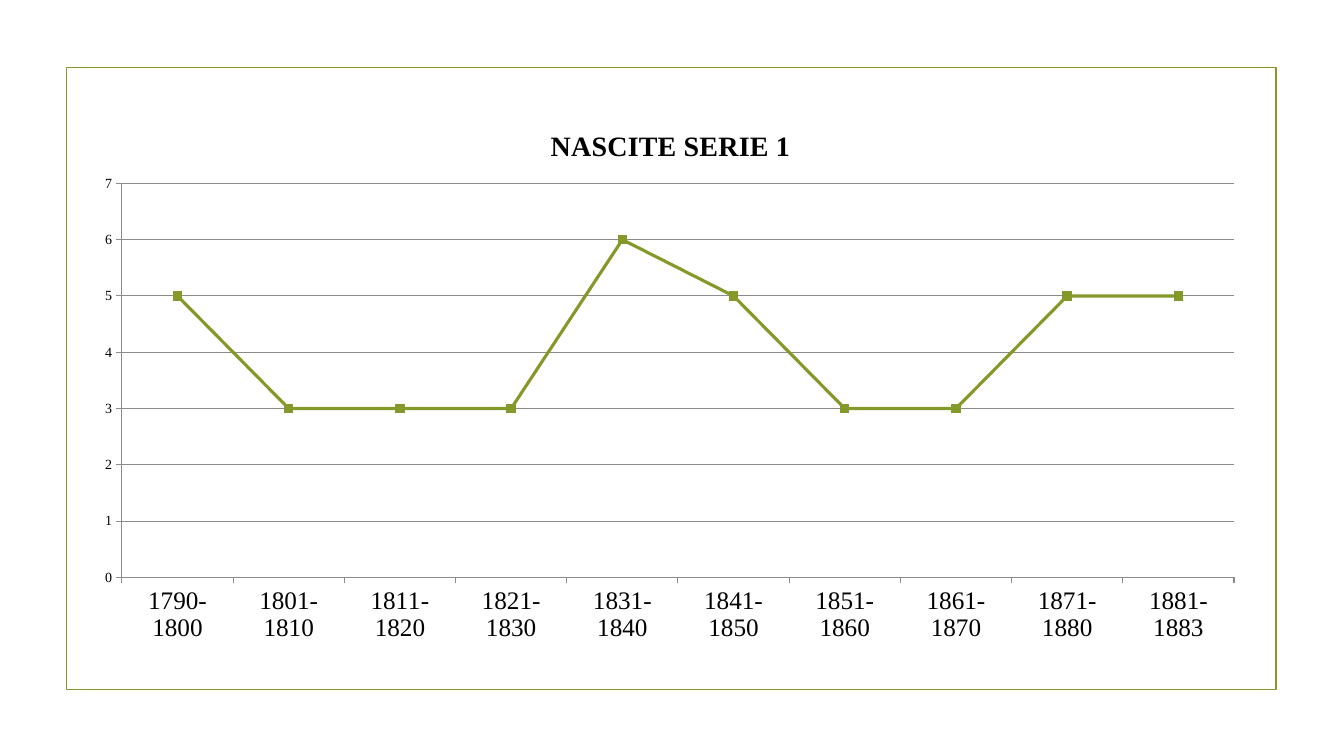
from dataclasses import dataclass

from pptx import Presentation
from pptx.chart.axis import CategoryAxis, ValueAxis
from pptx.chart.chart import Chart
from pptx.chart.data import CategoryChartData
from pptx.dml.color import RGBColor
from pptx.enum.chart import XL_CHART_TYPE, XL_MARKER_STYLE, XL_TICK_MARK
from pptx.enum.shapes import MSO_SHAPE
from pptx.oxml import parse_xml
from pptx.oxml.ns import nsdecls, qn
from pptx.slide import Slide
from pptx.util import Inches, Pt


@dataclass(frozen=True)
class Theme:
    font: str = "Times New Roman"
    text: RGBColor = RGBColor(0x00, 0x00, 0x00)
    accent: RGBColor = RGBColor(0x83, 0x99, 0x2A)
    grid: RGBColor = RGBColor(0x8B, 0x8B, 0x8B)
    title_size: int = 20
    category_size: int = 18
    value_size: int = 10


@dataclass(frozen=True)
class Box:
    left: float
    top: float
    width: float
    height: float

    def lengths(self) -> tuple[Inches, Inches, Inches, Inches]:
        return (Inches(self.left), Inches(self.top),
                Inches(self.width), Inches(self.height))


@dataclass(frozen=True)
class Births:
    period: str
    count: int


THEME = Theme()
FRAME = Box(0.66, 0.67, 12, 6.17)
CHART = Box(0.82, 1.06, 11.66, 5.42)
PLOT = Box(1.21, 1.82, 11.03, 3.91)
BIRTHS = [
    Births("1790-1800", 5),
    Births("1801-1810", 3),
    Births("1811-1820", 3),
    Births("1821-1830", 3),
    Births("1831-1840", 6),
    Births("1841-1850", 5),
    Births("1851-1860", 3),
    Births("1861-1870", 3),
    Births("1871-1880", 5),
    Births("1881-1883", 5),
]


def add_frame(s: Slide) -> None:
    sp = s.shapes.add_shape(MSO_SHAPE.RECTANGLE, *FRAME.lengths())
    sp.shadow.inherit = False
    sp.fill.background()
    sp.line.color.rgb = THEME.accent
    sp.line.width = Pt(1.25)


def style_axis(axis: CategoryAxis | ValueAxis, size: int) -> None:
    axis.major_tick_mark = XL_TICK_MARK.OUTSIDE
    axis.minor_tick_mark = XL_TICK_MARK.NONE
    axis.format.line.color.rgb = THEME.grid
    axis.format.line.width = Pt(0.75)
    axis.tick_labels.font.size = Pt(size)


def style_title(chart: Chart) -> None:
    chart.has_title = True
    tf = chart.chart_title.text_frame
    tf.text = "NASCITE SERIE 1"
    font = tf.paragraphs[0].runs[0].font
    font.name = THEME.font
    font.size = Pt(THEME.title_size)
    font.bold = True
    font.color.rgb = THEME.text
    chart.chart_title.include_in_layout = False


def place_plot(chart: Chart) -> None:
    plot_area = chart.element.find(".//" + qn("c:plotArea"))
    for layout in plot_area.findall(qn("c:layout")):
        plot_area.remove(layout)
    fractions = {
        "x": (PLOT.left - CHART.left) / CHART.width,
        "y": (PLOT.top - CHART.top) / CHART.height,
        "w": PLOT.width / CHART.width,
        "h": PLOT.height / CHART.height,
    }
    sizes = "".join(f'<c:{k} val="{v:.4f}"/>' for k, v in fractions.items())
    plot_area.insert(0, parse_xml(
        f'<c:layout {nsdecls("c")}><c:manualLayout>'
        '<c:layoutTarget val="inner"/>'
        '<c:xMode val="edge"/><c:yMode val="edge"/>'
        f"{sizes}</c:manualLayout></c:layout>"))


def add_births_chart(s: Slide) -> None:
    data = CategoryChartData()
    data.categories = [b.period for b in BIRTHS]
    data.add_series("Series 1", [b.count for b in BIRTHS])
    chart = s.shapes.add_chart(
        XL_CHART_TYPE.LINE_MARKERS, *CHART.lengths(), data).chart
    chart.has_legend = False
    chart.font.name = THEME.font
    chart.font.size = Pt(THEME.value_size)
    chart.font.color.rgb = THEME.text
    style_title(chart)
    place_plot(chart)

    style_axis(chart.category_axis, THEME.category_size)
    values = chart.value_axis
    style_axis(values, THEME.value_size)
    values.minimum_scale, values.maximum_scale = 0, 7
    values.major_unit = 1
    values.has_major_gridlines = True
    values.major_gridlines.format.line.color.rgb = THEME.grid
    values.major_gridlines.format.line.width = Pt(0.75)

    plot = chart.plots[0]
    plot.vary_by_categories = False
    line = plot.series[0]
    line.smooth = False
    line.format.line.color.rgb = THEME.accent
    line.format.line.width = Pt(2.25)
    marker = line.marker
    marker.style = XL_MARKER_STYLE.SQUARE
    marker.size = 6
    marker.format.fill.solid()
    marker.format.fill.fore_color.rgb = THEME.accent
    marker.format.line.color.rgb = THEME.accent


def main() -> None:
    prs = Presentation()
    prs.slide_width = Inches(13.33)
    prs.slide_height = Inches(7.5)
    s = prs.slides.add_slide(prs.slide_layouts[6])
    add_frame(s)
    add_births_chart(s)
    prs.save("out.pptx")


if __name__ == "__main__":
    main()
